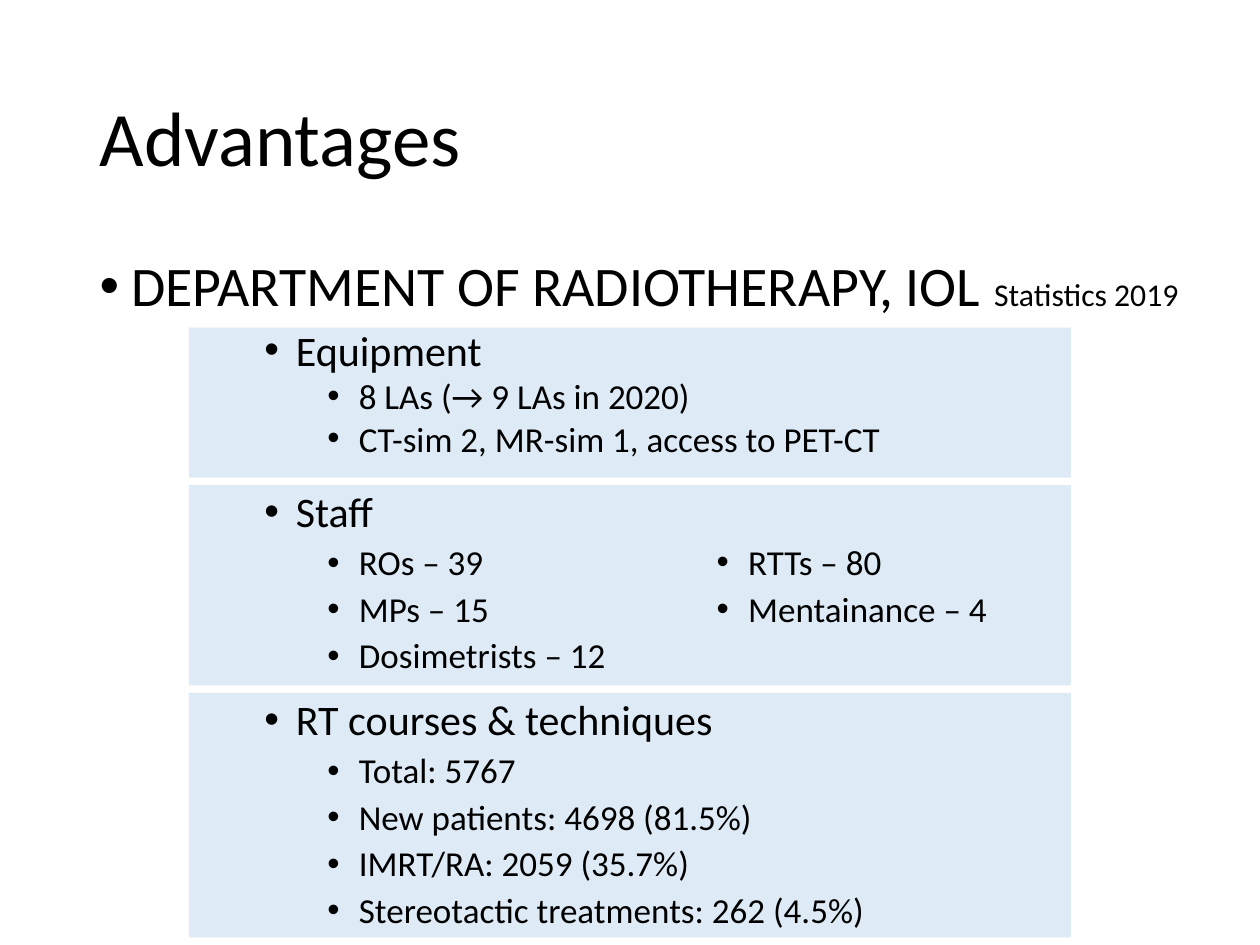
from dataclasses import dataclass

from lxml.etree import SubElement
from pptx import Presentation
from pptx.dml.color import RGBColor
from pptx.enum.shapes import MSO_SHAPE
from pptx.enum.text import MSO_ANCHOR, MSO_AUTO_SIZE as AutoSize, PP_ALIGN
from pptx.oxml.ns import qn
from pptx.util import Inches, Pt

FONT = "Calibri"
BLACK = "000000"
PANEL = "DEEBF7"
HEAD_SIZE, ITEM_SIZE = 24, 20


@dataclass
class Section:
    """A shaded panel with a heading and its bulleted items."""
    top: float
    height: float
    heading: str
    items: list[str]
    spacing: float = 0.9
    head_before: float = 12


SECTIONS = [
    Section(2.6, 1.19, "Equipment",
            ["8 LAs (→ 9 LAs in 2020)", "CT-sim 2, MR-sim 1, access to PET-CT"],
            spacing=0.8, head_before=5),
    Section(3.85, 1.59, "Staff", ["ROs – 39", "MPs – 15", "Dosimetrists – 12"]),
    Section(5.5, 1.94, "RT courses & techniques",
            ["Total: 5767", "New patients: 4698 (81.5%)",
             "IMRT/RA: 2059 (35.7%)", "Stereotactic treatments: 262 (4.5%)"]),
]
MORE_STAFF = ["RTTs – 80", "Mentainance – 4"]


def rgb(color: str) -> RGBColor:
    return RGBColor.from_string(color)


def place(sp, left: float, top: float, width: float, height: float) -> None:
    sp.left, sp.top = Inches(left), Inches(top)
    sp.width, sp.height = Inches(width), Inches(height)


def add_run(p, text: str, size: float) -> None:
    r = p.add_run()
    r.text = text
    r.font.name, r.font.size = FONT, Pt(size)
    r.font.color.rgb = rgb(BLACK)


def format_paragraph(p, spacing: float, before: float = 0) -> None:
    p.alignment = PP_ALIGN.LEFT
    p.line_spacing, p.space_before = spacing, Pt(before)


def set_bullet(p, indent: float, level: int = 0) -> None:
    p.level = level
    pPr = p._p.get_or_add_pPr()
    pPr.set("marL", str(Inches(indent)))
    pPr.set("indent", str(Inches(-0.25)))
    SubElement(pPr, qn("a:buFont"), typeface="Arial")
    SubElement(pPr, qn("a:buChar"), char="•")


def add_bullet(tf, text: str, size: float, level: int, indent: float,
               spacing: float, before: float) -> None:
    p = tf.paragraphs[0]
    if p.runs:
        p = tf.add_paragraph()
    format_paragraph(p, spacing, before)
    set_bullet(p, indent, level)
    add_run(p, text, size)


def add_section(slide, section: Section) -> None:
    sp = slide.shapes.add_shape(
        MSO_SHAPE.RECTANGLE, Inches(1.5), Inches(section.top),
        Inches(7), Inches(section.height))
    sp.shadow.inherit = False
    sp.fill.solid()
    sp.fill.fore_color.rgb = rgb(PANEL)
    sp.line.fill.background()
    tf = sp.text_frame
    tf.word_wrap = True
    tf.vertical_anchor = MSO_ANCHOR.TOP
    add_bullet(tf, section.heading, HEAD_SIZE, 1, 0.75,
               section.spacing, section.head_before)
    for item in section.items:
        add_bullet(tf, item, ITEM_SIZE, 2, 1.25, section.spacing, 5)


def main() -> None:
    prs = Presentation()
    prs.slide_width, prs.slide_height = Inches(10), Inches(7.5)
    slide = prs.slides.add_slide(prs.slide_layouts[1])

    # Title
    title = slide.shapes.title
    place(title, 0.69, 0.4, 8.62, 1.45)
    tf = title.text_frame
    tf.auto_size = AutoSize.NONE
    tf.vertical_anchor = MSO_ANCHOR.MIDDLE
    format_paragraph(tf.paragraphs[0], 0.9)
    add_run(tf.paragraphs[0], "Advantages", 44)

    # Department line
    body = slide.placeholders[1]
    place(body, 0.69, 2, 9.2, 0.71)
    tf = body.text_frame
    tf.auto_size = AutoSize.NONE
    add_bullet(tf, "DEPARTMENT OF RADIOTHERAPY, IOL ", 31.9, 0, 0.25, 0.9, 0)
    add_run(tf.paragraphs[0], "Statistics 2019", 18.1)

    # Shaded sections
    for section in SECTIONS:
        add_section(slide, section)

    # Second column of the staff section
    box = slide.shapes.add_textbox(Inches(5.53), Inches(4.24),
                                   Inches(3.17), Inches(0.82))
    tf = box.text_frame
    tf.word_wrap = True
    tf.auto_size = AutoSize.SHAPE_TO_FIT_TEXT
    for item in MORE_STAFF:
        add_bullet(tf, item, ITEM_SIZE, 2, 0.31, 1.0, 3)

    prs.save("out.pptx")


if __name__ == "__main__":
    main()
